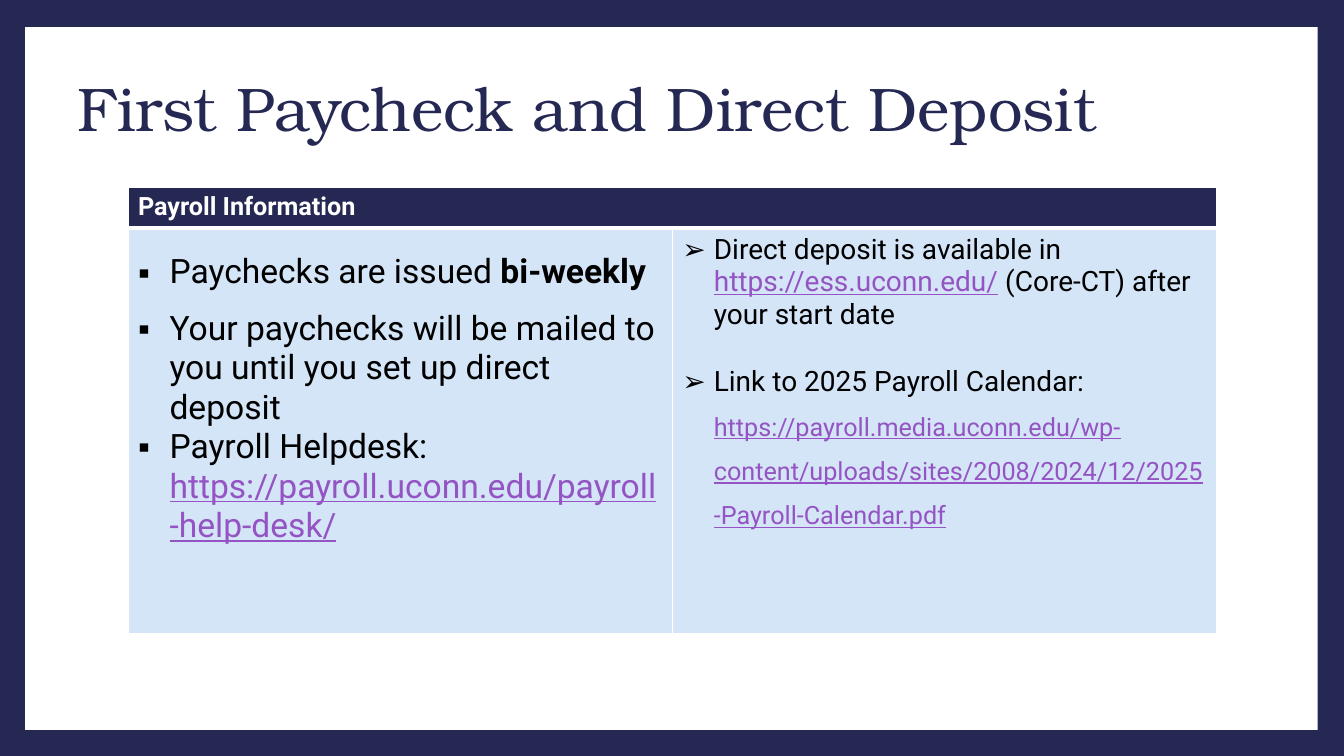
from lxml import etree
from pptx import Presentation
from pptx.dml.color import RGBColor
from pptx.enum import shapes, text
from pptx.oxml import ns
from pptx.util import Pt

NAVY = RGBColor(0x24, 0x28, 0x52)
WHITE = RGBColor(0xFF, 0xFF, 0xFF)
BLACK = RGBColor(0, 0, 0)
PALE_BLUE = RGBColor(0xD4, 0xE5, 0xF7)
LINK = RGBColor(0x94, 0x54, 0xC3)
BODY_FONT = "Roboto"


def add_borders(cell, bottom):
    """Give a cell white borders, 1 pt wide except for the bottom one."""
    props = cell._tc.get_or_add_tcPr()
    for index, (side, width) in enumerate([("L", 1), ("R", 1), ("T", 1), ("B", bottom)]):
        line = etree.Element(ns.qn(f"a:ln{side}"), w=str(Pt(width)))
        fill = etree.SubElement(line, ns.qn("a:solidFill"))
        etree.SubElement(fill, ns.qn("a:srgbClr"), val=str(WHITE))
        props.insert(index, line)


def fill_list(cell, bullet, size, items):
    """Write bulleted items, each (line spacing, space after, [(words, style, size)])."""
    for index, (spacing, after, runs) in enumerate(items):
        item = cell.text_frame.paragraphs[0] if index == 0 else cell.text_frame.add_paragraph()
        props = item._p.get_or_add_pPr()
        props.set("marL", str(Pt(22.5)))
        props.set("indent", str(Pt(-22.5)))
        etree.SubElement(props, ns.qn("a:buFont"), typeface="Arial")
        etree.SubElement(props, ns.qn("a:buChar"), char=bullet)
        item.line_spacing = spacing
        item.space_after = Pt(after)
        item.font.name = BODY_FONT
        for words, style, run_size in runs:
            run = item.add_run()
            run.text = words
            run.font.name = BODY_FONT
            run.font.size = Pt(run_size or size)
            run.font.bold = style == "bold"
            run.font.underline = style == "link"
            run.font.color.rgb = LINK if style == "link" else BLACK


prs = Presentation()
prs.slide_width, prs.slide_height = Pt(960), Pt(540)
slide = prs.slides.add_slide(prs.slide_layouts[6])
slide.background.fill.solid()
slide.background.fill.fore_color.rgb = NAVY

panel = slide.shapes.add_shape(
    shapes.MSO_SHAPE.RECTANGLE, Pt(18), Pt(19.3), Pt(923.2), Pt(502))
panel.shadow.inherit = False
panel.fill.solid()
panel.fill.fore_color.rgb = WHITE
panel.line.fill.background()

title = slide.shapes.add_textbox(Pt(48), Pt(26.6), Pt(777.6), Pt(106.6)).text_frame
title.word_wrap = True
title.vertical_anchor = text.MSO_ANCHOR.MIDDLE
heading = title.paragraphs[0]
heading.text = "First Paycheck and Direct Deposit"
heading.line_spacing = 0.9
heading.font.name = "TeX Gyre Bonum"
heading.font.size = Pt(44)
heading.font.color.rgb = NAVY

payroll = slide.shapes.add_table(2, 2, Pt(91.4), Pt(134), Pt(777.6), Pt(318)).table
payroll.rows[0].height, payroll.rows[1].height = Pt(28), Pt(290)
for row, (colour, bottom) in enumerate([(NAVY, 3), (PALE_BLUE, 1)]):
    for column in range(2):
        cell = payroll.cell(row, column)
        cell.fill.solid()
        cell.fill.fore_color.rgb = colour
        add_borders(cell, bottom)

payroll.cell(0, 0).merge(payroll.cell(0, 1))
header = payroll.cell(0, 0).text_frame.paragraphs[0]
header.text = "Payroll Information"
header.font.name = BODY_FONT
header.font.size = Pt(18)
header.font.bold = True
header.font.color.rgb = WHITE

fill_list(payroll.cell(1, 0), "▪", 24, [
    (1.5, 12, [("Paychecks are issued ", "plain", None), ("bi-weekly", "bold", None)]),
    (1, 0, [("Your paychecks will be mailed to you until you set up direct deposit",
             "plain", None)]),
    (1, 0, [("Payroll Helpdesk: ", "plain", None),
            ("https://payroll.uconn.edu/payroll-help-desk/", "link", None)]),
])
fill_list(payroll.cell(1, 1), "➢", 20, [
    (1, 12, [("Direct deposit is available in ", "plain", None),
             ("https://ess.uconn.edu/", "link", None),
             (" (Core-CT) after your start date", "plain", None)]),
    (1.5, 0, [("Link to 2025 Payroll Calendar: ", "plain", None),
              ("https://payroll.media.uconn.edu/wp-content/uploads/sites/2008/2024/12/"
               "2025-Payroll-Calendar.pdf", "link", 18)]),
])

prs.save("out.pptx")
